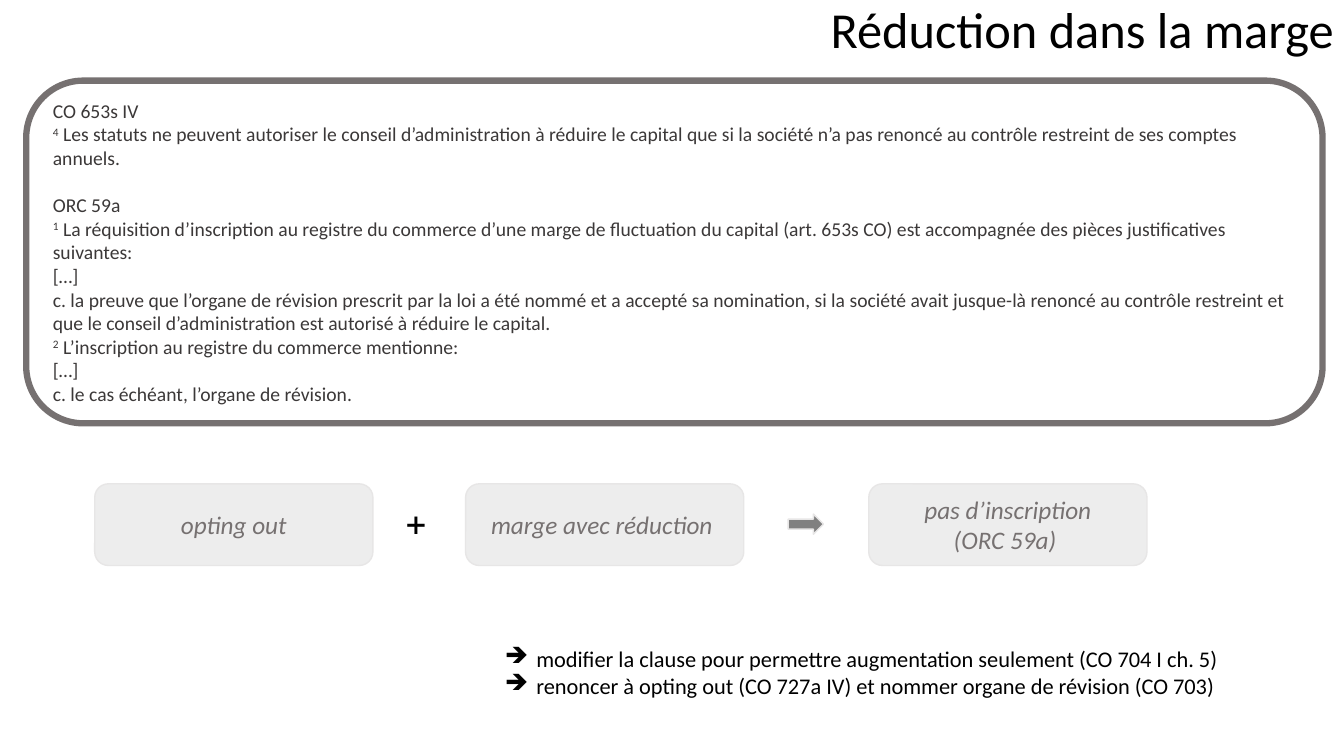
import pptx
import pptx.util
import pptx.dml.color
import pptx.enum.shapes
import pptx.enum.text
from lxml import etree

Pt = pptx.util.Pt
SHAPE = pptx.enum.shapes.MSO_SHAPE
ALIGN = pptx.enum.text.PP_ALIGN
ANCHOR = pptx.enum.text.MSO_ANCHOR
COLORS = {"black": "000000", "frame": "767171", "law": "3B3838",
          "box": "EDEDED", "edge": "E7E6E6", "arrow": "808080"}


def rgb(name):
    return pptx.dml.color.RGBColor.from_string(COLORS[name])


def style(p, size, color, font="Calibri", align=ALIGN.LEFT):
    p.font.size = Pt(size)
    p.font.name = font
    p.font.color.rgb = rgb(color)
    p.alignment = align


prs = pptx.Presentation()
prs.slide_width, prs.slide_height = Pt(960), Pt(540)
s = prs.slides.add_slide(prs.slide_layouts[5])

sp = s.shapes.title
sp.left, sp.top, sp.width, sp.height = Pt(54), Pt(0), Pt(906), Pt(77)
tf = sp.text_frame
tf.text = "Réduction dans la marge"
tf.vertical_anchor = ANCHOR.TOP
tf.auto_size = pptx.enum.text.MSO_AUTO_SIZE.NONE
p = tf.paragraphs[0]
style(p, 36, "black", align=ALIGN.RIGHT)
p.line_spacing = 0.9

boxes = [(67.7, "opting out"), (332.6, "marge avec réduction "),
         (620.6, "pas d’inscription\n(ORC 59a) ")]
for left, text in boxes:
    sp = s.shapes.add_shape(SHAPE.ROUNDED_RECTANGLE, Pt(left), Pt(345.6), Pt(198.7), Pt(58.3))
    sp.shadow.inherit = False
    sp.fill.solid()
    sp.fill.fore_color.rgb = rgb("box")
    sp.line.color.rgb = rgb("edge")
    sp.line.width = Pt(1)
    tf = sp.text_frame
    tf.vertical_anchor = ANCHOR.MIDDLE
    p = tf.paragraphs[0]
    p.text = text.replace("\n", "\v")
    style(p, 18, "frame", align=ALIGN.CENTER)
    p.font.italic = True

sp = s.shapes.add_textbox(Pt(283), Pt(360), Pt(32.4), Pt(28.8))
sp.text_frame.word_wrap = True
p = sp.text_frame.paragraphs[0]
p.text = "➕"
style(p, 18, "black", "Arial")

sp = s.shapes.add_shape(SHAPE.RIGHT_ARROW, Pt(563), Pt(367.2), Pt(25.2), Pt(14.4))
sp.shadow.inherit = False
sp.fill.solid()
sp.fill.fore_color.rgb = rgb("arrow")
sp.line.color.rgb = rgb("edge")
sp.line.width = Pt(1)

options = ["modifier la clause pour permettre augmentation seulement (CO 704 I ch. 5)",
           "renoncer à opting out (CO 727a IV) et nommer organe de révision (CO 703)"]
sp = s.shapes.add_textbox(Pt(353.5), Pt(457.2), Pt(592.6), Pt(46))
tf = sp.text_frame
tf.word_wrap = True
for i, text in enumerate(options):
    p = tf.add_paragraph() if i else tf.paragraphs[0]
    p.text = text
    style(p, 16, "black")
    pPr = p._p.get_or_add_pPr()
    pPr.set("marL", str(Pt(22.5)))
    pPr.set("indent", str(-Pt(22.5)))
    bullet = etree.Element(pptx.oxml.ns.qn("a:buChar"), char="➔")
    pPr.insert(0, bullet)

law = [
    ("", "CO 653s IV"),
    ("4", " Les statuts ne peuvent autoriser le conseil d’administration à réduire le capital "
          "que si la société n’a pas renoncé au contrôle restreint de ses comptes annuels."),
    ("", "ORC 59a"),
    ("1", " La réquisition d’inscription au registre du commerce d’une marge de fluctuation du "
          "capital (art. 653s CO) est accompagnée des pièces justificatives suivantes:"),
    ("", "[…]"),
    ("", "c. la preuve que l’organe de révision prescrit par la loi a été nommé et a accepté sa "
         "nomination, si la société avait jusque-là renoncé au contrôle restreint et que le "
         "conseil d’administration est autorisé à réduire le capital."),
    ("2", " L’inscription au registre du commerce mentionne:"),
    ("", "[…]"),
    ("", "c. le cas échéant, l’organe de révision."),
]
sp = s.shapes.add_shape(SHAPE.ROUNDED_RECTANGLE, Pt(18.7), Pt(57.6), Pt(926), Pt(244.8))
sp.shadow.inherit = False
sp.fill.background()
sp.line.color.rgb = rgb("frame")
sp.line.width = Pt(4.5)
tf = sp.text_frame
tf.vertical_anchor = ANCHOR.MIDDLE
for i, (mark, text) in enumerate(law):
    p = tf.add_paragraph() if i else tf.paragraphs[0]
    style(p, 14, "law")
    if mark:
        r = p.add_run()
        r.text = mark
        r._r.get_or_add_rPr().set("baseline", "30000")
    p.add_run().text = text
    if text == "ORC 59a":
        p.space_before = Pt(17)

prs.save("out.pptx")
